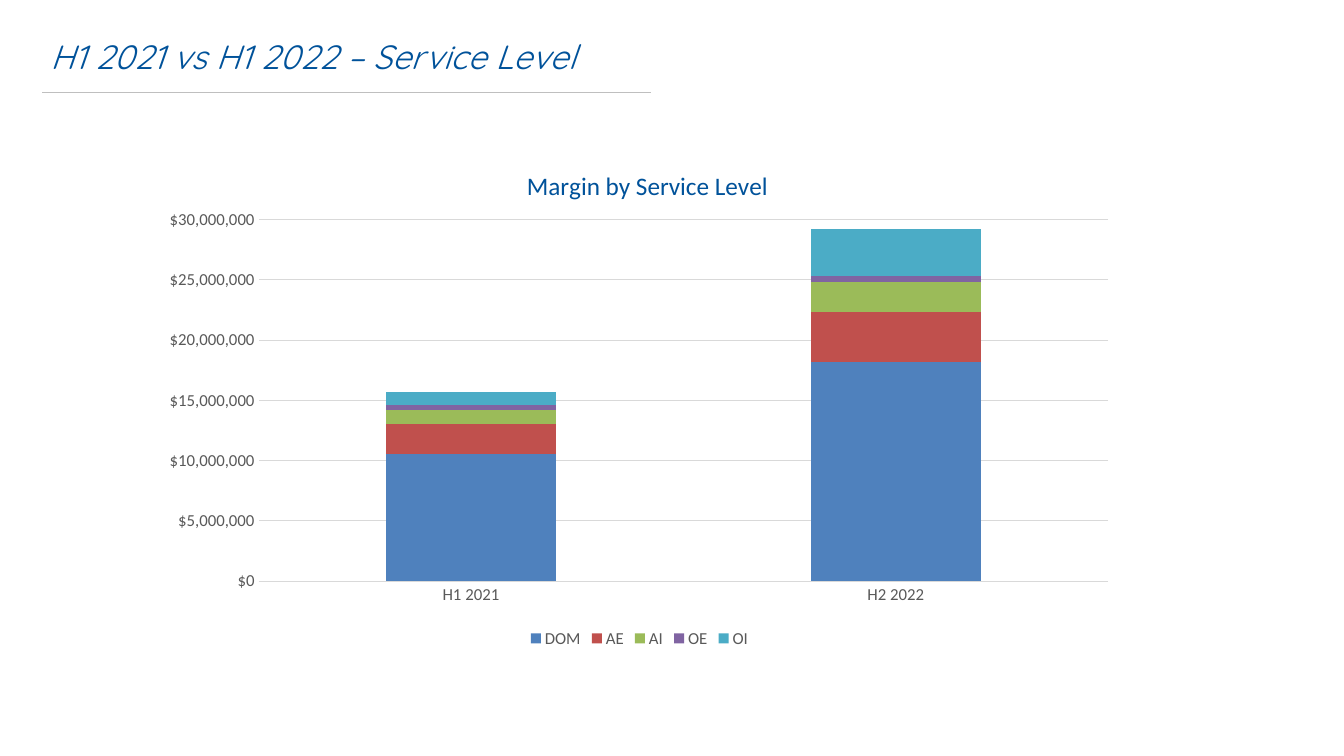
import pptx
import pptx.chart.data
import pptx.dml.color
import pptx.enum.chart
import pptx.enum.shapes
import pptx.enum.text
import pptx.oxml
import pptx.oxml.ns
import pptx.util

Cm = pptx.util.Cm
Pt = pptx.util.Pt
RGB = pptx.dml.color.RGBColor
NAVY = RGB(0x00, 0x52, 0x9A)
GREY = RGB(0x59, 0x59, 0x59)
RULE = RGB(0xBF, 0xBF, 0xBF)
GRID = RGB(0xD9, 0xD9, 0xD9)
BLUE = RGB(0x4F, 0x81, 0xBD)
RED = RGB(0xC0, 0x50, 0x4D)
GREEN = RGB(0x9B, 0xBB, 0x59)
PLUM = RGB(0x80, 0x64, 0xA2)
TEAL = RGB(0x4B, 0xAC, 0xC6)


def write(frame, text, face, size, color, italic=False):
    run = frame.paragraphs[0].add_run()
    run.text = text
    run.font.name = face
    run.font.size = Pt(size)
    run.font.color.rgb = color
    run.font.italic = italic
    run.font.bold = False


def place(item, **parts):
    old = item.find(pptx.oxml.ns.qn("c:layout"))
    if old is not None:
        item.remove(old)
    tags = "".join(f'<c:{tag} val="{val}"/>' for tag, val in parts.items())
    layout = pptx.oxml.parse_xml(
        f'<c:layout {pptx.oxml.ns.nsdecls("c")}>'
        f"<c:manualLayout>{tags}</c:manualLayout></c:layout>"
    )
    text = item.find(pptx.oxml.ns.qn("c:tx"))
    if text is None:
        item.insert(0, layout)
    else:
        text.addnext(layout)


deck = pptx.Presentation()
deck.slide_width = Cm(33.87)
deck.slide_height = Cm(19.05)
slide = deck.slides.add_slide(deck.slide_layouts[6])

box = slide.shapes.add_textbox(Cm(1.27), Cm(0.84), Cm(15.88), Cm(1.07))
frame = box.text_frame
frame.word_wrap = True
frame.vertical_anchor = pptx.enum.text.MSO_ANCHOR.BOTTOM
frame.margin_left = frame.margin_right = 0
frame.margin_top = frame.margin_bottom = 0
write(frame, "H1 2021 vs H1 2022 – Service Level", "Quicksand", 24, NAVY, italic=True)

rule = slide.shapes.add_connector(
    pptx.enum.shapes.MSO_CONNECTOR.STRAIGHT, Cm(1.07), Cm(2.34), Cm(16.41), Cm(2.34)
)
rule.line.color.rgb = RULE
rule.line.width = Pt(0.75)
rule._element.spPr.append(
    pptx.oxml.parse_xml(f'<a:effectLst {pptx.oxml.ns.nsdecls("a")}/>')
)

levels = [
    ("DOM", BLUE, (10500000, 18200000)),
    ("AE", RED, (2500000, 4100000)),
    ("AI", GREEN, (1200000, 2500000)),
    ("OE", PLUM, (400000, 500000)),
    ("OI", TEAL, (1100000, 3900000)),
]
data = pptx.chart.data.CategoryChartData(number_format='"$"#,##0')
data.categories = ["H1 2021", "H2 2022"]
for name, color, sums in levels:
    data.add_series(name, sums)

chart = slide.shapes.add_chart(
    pptx.enum.chart.XL_CHART_TYPE.COLUMN_STACKED,
    Cm(3.81), Cm(3.61), Cm(24.61), Cm(12.83), data,
).chart
chart.font.name = "Calibri"
chart.font.size = Pt(12)
chart.font.color.rgb = GREY

chart.has_title = True
title = chart.chart_title
write(title.text_frame, "Margin by Service Level", "Calibri", 18, NAVY)
title.include_in_layout = False
place(title._element, xMode="edge", yMode="edge", x=0.38, y=0.04)

plot = chart.plots[0]
plot.gap_width = 150
plot.overlap = 100
plot.vary_by_categories = False
for bar, (name, color, sums) in zip(plot.series, levels):
    bar.format.fill.solid()
    bar.format.fill.fore_color.rgb = color
place(
    chart._chartSpace.chart.plotArea,
    layoutTarget="inner", xMode="edge", yMode="edge", x=0.11, y=0.15, w=0.87, h=0.71,
)

cats = chart.category_axis
sums = chart.value_axis
for axis in (cats, sums):
    axis.major_tick_mark = pptx.enum.chart.XL_TICK_MARK.NONE
    axis.minor_tick_mark = pptx.enum.chart.XL_TICK_MARK.NONE
    axis.tick_labels.font.name = "Calibri"
    axis.tick_labels.font.size = Pt(12)
    axis.tick_labels.font.color.rgb = GREY
sums.minimum_scale = 0
sums.maximum_scale = 30000000
sums.major_unit = 5000000
sums.tick_labels.number_format = '"$"#,##0'
sums.tick_labels.number_format_is_linked = False
sums.format.line.fill.background()
sums.has_major_gridlines = True
for line in (cats.format.line, sums.major_gridlines.format.line):
    line.color.rgb = GRID
    line.width = Pt(0.75)

chart.has_legend = True
chart.legend.position = pptx.enum.chart.XL_LEGEND_POSITION.BOTTOM
chart.legend.include_in_layout = False
chart.legend.font.name = "Calibri"
chart.legend.font.size = Pt(12)
chart.legend.font.color.rgb = GREY

deck.save("out.pptx")
